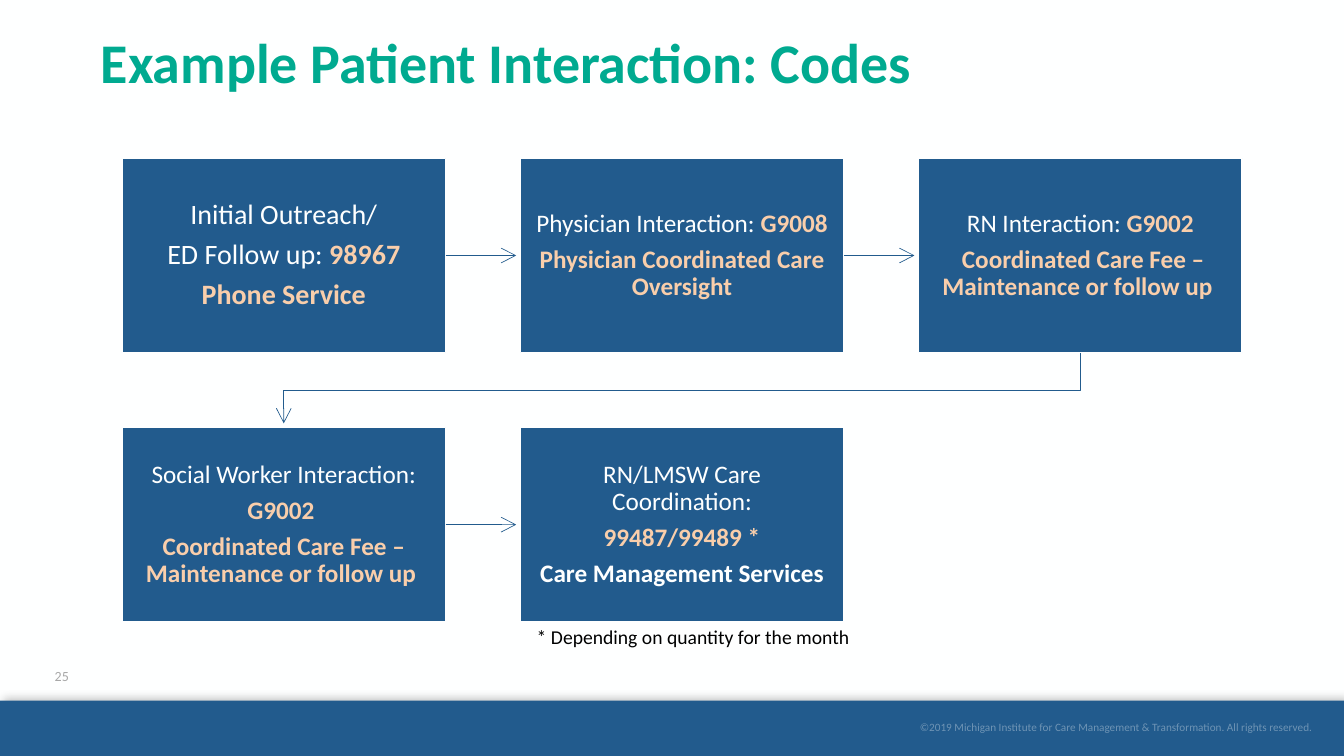
import pptx
import pptx.dml.color
import pptx.enum.shapes
import pptx.enum.text
import pptx.oxml
import pptx.oxml.ns
import pptx.util
from dataclasses import dataclass

ALIGN = pptx.enum.text.PP_ALIGN
ANCHOR = pptx.enum.text.MSO_ANCHOR
RECT = pptx.enum.shapes.MSO_SHAPE.RECTANGLE
STRAIGHT = pptx.enum.shapes.MSO_CONNECTOR.STRAIGHT
NS = pptx.oxml.ns.nsdecls("a")
inch = pptx.util.Inches


@dataclass(frozen=True)
class Theme:
    font: str = "Calibri"
    paper: str = "FEFFFF"
    blue: str = "225B8D"
    green: str = "00AA90"
    peach: str = "F9CEAB"
    gray: str = "A8A8A8"
    black: str = "000000"
    title: int = 40
    lead: int = 20
    body: int = 18
    note: int = 14
    number: int = 10
    legal: int = 8


T = Theme()


def rgb(color):
    return pptx.dml.color.RGBColor.from_string(color)


def apply(obj, **values):
    for name, value in values.items():
        setattr(obj, name, value)


class Flow:
    W, H = 13.33, 7.5
    LEFT, TOP = 1.21, 1.57
    COL, ROW = 3.95, 2.67
    BOX_W, BOX_H = 3.21, 1.93
    GAP = 0.04

    def __init__(self, prs):
        apply(prs, slide_width=inch(self.W), slide_height=inch(self.H))
        self.s = prs.slides.add_slide(prs.slide_layouts[5])
        fill = self.s.background.fill
        fill.solid()
        fill.fore_color.rgb = rgb(T.paper)

    def cell(self, col, row):
        """Left and top, in inches, of a box on the grid."""
        return self.LEFT + col * self.COL, self.TOP + row * self.ROW

    def set_text(self, sp, paras, size, align=ALIGN.LEFT, anchor=ANCHOR.MIDDLE,
                 insets=(0.1, 0.05, 0.1, 0.05), spacing=1.0, after=0):
        """Fill a shape with paragraphs, each a list of (text, color, bold)."""
        tf = sp.text_frame
        sides = ("margin_left", "margin_top", "margin_right", "margin_bottom")
        apply(tf, word_wrap=True, vertical_anchor=anchor,
              auto_size=pptx.enum.text.MSO_AUTO_SIZE.NONE,
              **{side: inch(v) for side, v in zip(sides, insets)})
        for i, runs in enumerate(paras):
            p = tf.add_paragraph() if i else tf.paragraphs[0]
            apply(p, alignment=align, line_spacing=spacing,
                  space_before=pptx.util.Pt(0), space_after=pptx.util.Pt(after))
            for text, color, bold in runs:
                r = p.add_run()
                r.text = text
                apply(r.font, name=T.font, size=pptx.util.Pt(size), bold=bold)
                r.font.color.rgb = rgb(color)

    def title(self, text):
        sp = self.s.shapes.title
        apply(sp, left=inch(0.9), top=inch(0.05),
              width=inch(self.W - 0.9), height=inch(1.2))
        self.set_text(sp, [[(text, T.green, True)]], T.title, spacing=0.9)

    def text(self, text, at, size, color, **layout):
        """Place a text box at shares of the slide's width and height."""
        x, y, w, h = at
        sp = self.s.shapes.add_textbox(inch(x * self.W), inch(y * self.H),
                                       inch(w * self.W), inch(h * self.H))
        self.set_text(sp, [[(text, color, False)]], size, **layout)
        return sp

    def rect(self, x, y, w, h):
        sp = self.s.shapes.add_shape(RECT, inch(x), inch(y), inch(w), inch(h))
        sp.shadow.inherit = False
        sp.fill.solid()
        sp.fill.fore_color.rgb = rgb(T.blue)
        return sp

    def footer_bar(self):
        sp = self.rect(0, 6.95, self.W, 0.55)
        sp.line.fill.background()
        effects = sp._element.spPr.find(pptx.oxml.ns.qn("a:effectLst"))
        effects.append(pptx.oxml.parse_xml(
            f'<a:outerShdw {NS} blurRad="76200" dist="38100" dir="18900000" rotWithShape="0">'
            f'<a:srgbClr val="{T.black}"><a:alpha val="25000"/></a:srgbClr></a:outerShdw>'))

    def box(self, col, row, paras, size):
        sp = self.rect(*self.cell(col, row), self.BOX_W, self.BOX_H)
        sp.line.color.rgb = rgb(T.paper)
        sp.line.width = pptx.util.Pt(1)
        inset = 0.16 if size == T.lead else 0.14
        self.set_text(sp, paras, size, ALIGN.CENTER, insets=(inset,) * 4,
                      spacing=0.9, after=0.35 * size)
        return sp

    def arrow_line(self, sp):
        sp.line.color.rgb = rgb(T.blue)
        sp.line.width = pptx.util.Pt(0.5)
        sp.line._get_or_add_ln().append(
            pptx.oxml.parse_xml(f'<a:tailEnd {NS} type="arrow" w="lg" len="lg"/>'))

    def arrow(self, box, col, row):
        """Arrow from the right side of a box to just before the next one."""
        x, y = self.cell(col, row)
        y += self.BOX_H / 2
        sp = self.s.shapes.add_connector(
            STRAIGHT, inch(x + self.BOX_W), inch(y),
            inch(x + self.COL - self.GAP), inch(y))
        sp.begin_connect(box, 3)
        self.arrow_line(sp)
        sp._element.spPr.append(pptx.oxml.parse_xml(f"<a:effectLst {NS}/>"))

    def wrap_arrow(self, start, end):
        """Bent arrow from under one box to just above a box in the next row."""
        (x1, y1), (x2, y2) = self.cell(*start), self.cell(*end)
        x1, x2 = x1 + self.BOX_W / 2, x2 + self.BOX_W / 2
        y1 += self.BOX_H
        mid = (y1 + y2) / 2
        points = [(x1, y1), (x1, mid), (x2, mid), (x2, y2 - self.GAP)]
        (x, y), *rest = [(inch(a), inch(b)) for a, b in points]
        fb = self.s.shapes.build_freeform(x, y)
        fb.add_line_segments(rest, close=False)
        sp = fb.convert_to_shape()
        sp.shadow.inherit = False
        sp.fill.background()
        self.arrow_line(sp)


def plain(text):
    return text, T.paper, False


def code(text):
    return text, T.peach, True


STEPS = [
    (0, 0, T.lead, [[plain("Initial Outreach/")],
                    [plain("ED Follow up: "), code("98967")],
                    [code("Phone Service")]]),
    (1, 0, T.body, [[plain("Physician Interaction: "), code("G9008")],
                    [code("Physician Coordinated Care Oversight")]]),
    (2, 0, T.body, [[plain("RN Interaction: "), code("G9002")],
                    [code(" Coordinated Care Fee – Maintenance or follow up ")]]),
    (0, 1, T.body, [[plain("Social Worker Interaction:")],
                    [code("G9002 ")],
                    [code("Coordinated Care Fee – Maintenance or follow up ")]]),
    (1, 1, T.body, [[plain("RN/LMSW Care Coordination:")],
                    [code("99487/99489 *")],
                    [("Care Management Services", T.paper, True)]]),
]


def main():
    prs = pptx.Presentation()
    flow = Flow(prs)
    flow.footer_bar()
    legal = flow.text(
        "©2019 Michigan Institute for Care Management & Transformation. All rights reserved.",
        (0.495, 0.944, 0.482, 0.036), T.legal, T.paper,
        align=ALIGN.RIGHT, insets=(0.1, 0.05, 0, 0.05))
    tint = legal._element.find(".//" + pptx.oxml.ns.qn("a:srgbClr"))
    tint.append(pptx.oxml.parse_xml(f'<a:alpha {NS} val="35000"/>'))
    flow.text("25", (0.025, 0.867, 0.042, 0.053), T.number, T.gray,
              align=ALIGN.CENTER, insets=(0, 0.05, 0, 0.05))
    flow.title("Example Patient Interaction: Codes")

    boxes = {(col, row): flow.box(col, row, paras, size)
             for col, row, size, paras in STEPS}
    for (col, row), box in boxes.items():
        if (col + 1, row) in boxes:
            flow.arrow(box, col, row)
    flow.wrap_arrow((2, 0), (0, 1))
    flow.text("* Depending on quantity for the month",
              (0.392, 0.82, 0.257, 0.045), T.note, T.black, anchor=ANCHOR.TOP)
    prs.save("out.pptx")


if __name__ == "__main__":
    main()
